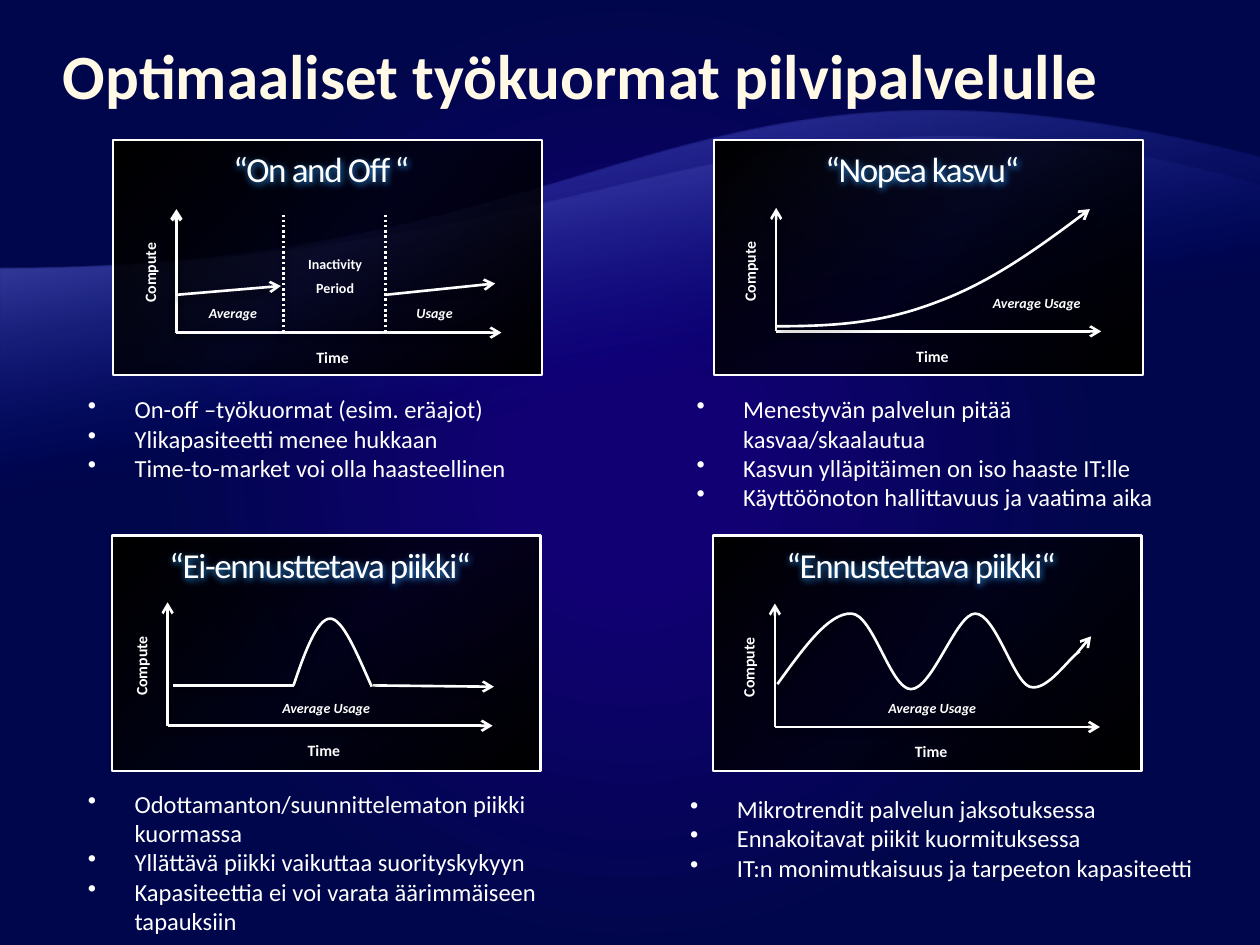
from pptx import Presentation
from pptx import util as u
from pptx.dml.color import RGBColor
from pptx.enum import dml, shapes, text
from pptx.oxml import parse_xml
from pptx.oxml.ns import qn

NS = 'xmlns:a="http://schemas.openxmlformats.org/drawingml/2006/main"'
WHITE = "FFFFFF"
MID = text.PP_ALIGN.CENTER
LABEL = dict(size=9, bold=True)
USAGE = dict(size=8, bold=True, italic=True)
SOFT = ("000000", 43, 4, 2, 90)
SLANT = ("000000", 40, 4, 3, 45)
HALO = ("2E95EA", 90, 4, 1, 60)


def rgb(code):
    return RGBColor.from_string(code)


def put(obj, **vals):
    for name, val in vals.items():
        setattr(obj, name, val)


def tint(fill, owner, stops, angle=None):
    """Gradient of (position, colour, opacity) stops; radial without an angle."""
    fill.background()
    marks = "".join(
        f'<a:gs pos="{pos * 1000}"><a:srgbClr val="{code}">'
        f'<a:alpha val="{clear * 1000}"/></a:srgbClr></a:gs>'
        for pos, code, clear in stops)
    if angle is None:
        kind = ('<a:path path="circle"><a:fillToRect l="50000" t="50000" '
                'r="50000" b="50000"/></a:path>')
    else:
        kind = f'<a:lin ang="{angle * 60000}" scaled="0"/>'
    new = parse_xml(f'<a:gradFill {NS} rotWithShape="1"><a:gsLst>{marks}</a:gsLst>{kind}</a:gradFill>')
    owner.replace(owner.find(qn("a:noFill")), new)


def shade(shape, code, clear, blur, dist, angle):
    shape._element.spPr.append(parse_xml(
        f'<a:effectLst {NS}><a:outerShdw blurRad="{u.Pt(blur)}" dist="{u.Pt(dist)}" '
        f'dir="{angle * 60000}" rotWithShape="0"><a:srgbClr val="{code}">'
        f'<a:alpha val="{clear * 1000}"/></a:srgbClr></a:outerShdw></a:effectLst>'))


def stroke(shape, width=1.5, tip=False, dots=False):
    shape.line.color.rgb = rgb(WHITE)
    shape.line.width = u.Pt(width)
    if dots:
        shape.line.dash_style = dml.MSO_LINE.ROUND_DOT
    if tip:
        shape.line._get_or_add_ln().append(parse_xml(f'<a:tailEnd {NS} type="arrow"/>'))


def line(group, x1, y1, x2, y2, shadow=SOFT, **look):
    wire = group.shapes.add_connector(
        shapes.MSO_CONNECTOR.STRAIGHT, *map(u.Inches, (x1, y1, x2, y2)))
    stroke(wire, **look)
    shade(wire, *shadow)


def curve(group, start, steps, close=False):
    """Outline whose steps are points (2 numbers) or Bézier curves (6 numbers)."""
    pen = group.shapes.build_freeform(*map(u.Inches, start), scale=1.0)
    pen.add_line_segments([tuple(map(u.Inches, s[-2:])) for s in steps], close=close)
    shape = pen.convert_to_shape()
    origin = (shape.left, shape.top)
    for seg, step in zip(list(shape._element.iter(qn("a:lnTo"))), steps):
        if len(step) == 6:
            spots = "".join(
                f'<a:pt x="{u.Inches(x) - origin[0]}" y="{u.Inches(y) - origin[1]}"/>'
                for x, y in zip(step[::2], step[1::2]))
            seg.getparent().replace(
                seg, parse_xml(f'<a:cubicBezTo {NS}>{spots}</a:cubicBezTo>'))
    return shape


def trace(group, start, steps, shadow=SLANT, tip=False):
    shape = curve(group, start, steps)
    shape.fill.background()
    stroke(shape, tip=tip)
    shade(shape, *shadow)


def words(group, box, lines, font, color=WHITE, inset=(0.1, 0.05), indent=0,
          turn=0, anchor=text.MSO_ANCHOR.TOP, **para):
    shape = group.shapes.add_textbox(*map(u.Inches, box))
    shape.rotation = turn
    side, edge = map(u.Inches, inset)
    frame = shape.text_frame
    put(frame, word_wrap=True, vertical_anchor=anchor, margin_left=side,
        margin_right=side, margin_top=edge, margin_bottom=edge)
    for i, line_text in enumerate(lines):
        p = frame.paragraphs[0] if i == 0 else frame.add_paragraph()
        put(p, **para)
        if indent:
            props = p._p.get_or_add_pPr()
            props.set("marL", str(u.Inches(indent)))
            props.set("indent", str(-u.Inches(indent)))
        run = p.add_run()
        run.text = line_text
        put(run.font, name="Calibri", **{**font, "size": u.Pt(font["size"])})
        run.font.color.rgb = rgb(color)
    return shape


def label(group, x, y, w, h, lines, turn=0, font=LABEL, **para):
    words(group, (x, y, w, h), lines, font, indent=0.25, turn=turn,
          alignment=MID, line_spacing=u.Pt(8), **para)


def usage(group, x, y, label_text):
    words(group, (x, y, 0.94, 0.15), [label_text], USAGE, inset=(0, 0), alignment=MID)


def bullets(group, box, lines):
    shape = words(group, box, lines, dict(size=14), indent=0.37)
    for p in shape.text_frame.paragraphs:
        p._p.get_or_add_pPr().append(parse_xml(f'<a:buChar {NS} char="•"/>'))


def panel(slide, x, y, head, axis, weight=1.5):
    """Dark card with a heading and two labelled axes."""
    group = slide.shapes.add_group_shape()
    card = group.shapes.add_shape(
        shapes.MSO_SHAPE.RECTANGLE, *map(u.Inches, (x, y, 3.4, 1.87)))
    card.shadow.inherit = False
    tint(card.fill, card._element.spPr,
         [(0, "000000", 100), (50, "000000", 70), (100, "000000", 100)], 45)
    stroke(card, 1.25)
    ax, ay = axis
    line(group, ax, ay, ax, ay - 0.98, tip=True, width=weight)
    line(group, ax, ay, ax + 2.58, ay, tip=True)
    label(group, ax - 0.57, ay - 0.58, 0.76, 0.21, ["Compute"], turn=270)
    label(group, ax + 0.88, ay + 0.11, 0.72, 0.22, ["Time"])
    title = words(group, (x - 0.05, y + 0.05, 3.4, 0.4), [head], dict(size=20),
                  inset=(0, 0.05), alignment=MID, line_spacing=0.9)
    run = title.text_frame.paragraphs[0].runs[0]
    props = run._r.get_or_add_rPr()
    props.set("spc", "-80")
    tint(run.font.fill, props, [(52, WHITE, 100), (83, "2E95EA", 100)], 90)
    shade(title, *HALO)
    return group


def wave(slide, start, steps, color, clear):
    shape = curve(slide, start, steps, close=True)
    shape.shadow.inherit = False
    shape.line.fill.background()
    tint(shape.fill, shape._element.spPr, [(65, "000D9E", 0), (100, color, clear)], 260)


def main():
    deck = Presentation()
    put(deck, slide_width=u.Inches(10), slide_height=u.Inches(7.5))
    slide = deck.slides.add_slide(deck.slide_layouts[6])

    # Background and waves
    fill = slide.background.fill
    fill.background()
    tint(fill, next(slide.element.iter(qn("p:bgPr"))),
         [(13, "110074", 100), (61, "00064B", 100)])
    wave(slide, (10, 7.33), [(0, 7.33), (0, 2.13), (5, 2.13, 5.34, 0.05, 10, 1.25)],
         "797FFF", 55)
    wave(slide, (10, 6.37), [(0, 6.37), (0, 2.13), (5, 2.13, 5.98, 0.31, 10, 1.47)],
         "A3A7FF", 30)

    # On and off
    g = panel(slide, 0.9, 1.11, "“On and Off “", (1.4, 2.64), weight=2)
    line(g, 1.4, 2.34, 2.23, 2.27, tip=True)
    line(g, 3.06, 2.34, 3.93, 2.25, tip=True)
    for x in (2.25, 3.06):
        line(g, x, 2.64, x, 1.71, dots=True)
    usage(g, 1.38, 2.42, "Average")
    usage(g, 2.98, 2.42, "Usage")
    label(g, 2.2, 2, 0.92, 0.4, ["Inactivity", "Period"],
          font=dict(size=8, bold=True), space_after=u.Pt(6))
    bullets(g, (0.6, 3.08, 4.16, 0.81), [
        "On-off –työkuormat (esim. eräajot)", "Ylikapasiteetti menee hukkaan",
        "Time-to-market voi olla haasteellinen"])

    # Unpredictable peak
    g = panel(slide, 0.89, 4.25, "“Ei-ennusttetava piikki“", (1.33, 5.76))
    usage(g, 2.12, 5.55, "Average Usage")
    line(g, 2.96, 5.44, 3.92, 5.45, SLANT, tip=True)
    line(g, 1.37, 5.44, 2.33, 5.44, SLANT)
    trace(g, (2.33, 5.44), [(2.42, 5.17, 2.52, 4.91, 2.62, 4.91),
                            (2.72, 4.91, 2.83, 5.18, 2.95, 5.45)])
    bullets(g, (0.6, 6.21, 4.4, 1.28), [
        "Odottamanton/suunnittelematon piikki kuormassa",
        "Yllättävä piikki vaikuttaa suorityskykyyn",
        "Kapasiteettia ei voi varata äärimmäiseen tapauksiin"])

    # Fast growth
    g = panel(slide, 5.67, 1.11, "“Nopea kasvu“", (6.16, 2.63))
    usage(g, 7.76, 2.34, "Average Usage")
    trace(g, (6.16, 2.59), [(6.65, 2.59, 7.01, 2.56, 7.43, 2.4),
                            (7.84, 2.25, 8.24, 1.97, 8.65, 1.66)], tip=True)
    bullets(g, (5.43, 3.08, 4.12, 1.04), [
        "Menestyvän palvelun pitää kasvaa/skaalautua",
        "Kasvun ylläpitäimen on iso haaste IT:lle",
        "Käyttöönoton hallittavuus ja vaatima aika"])

    # Predictable peak
    g = panel(slide, 5.66, 4.25, "“Ennustettava piikki“", (6.15, 5.77))
    usage(g, 6.93, 5.55, "Average Usage")
    line(g, 8.55, 5.18, 8.66, 5.05, tip=True)
    trace(g, (6.17, 5.43), [
        (6.38, 5.14, 6.58, 4.86, 6.76, 4.87), (6.93, 4.88, 7.07, 5.47, 7.23, 5.47),
        (7.4, 5.47, 7.59, 4.87, 7.74, 4.87), (7.9, 4.87, 8.04, 5.4, 8.17, 5.45),
        (8.31, 5.5, 8.49, 5.21, 8.57, 5.17)])
    bullets(g, (5.38, 6.25, 4.37, 0.81), [
        "Mikrotrendit palvelun jaksotuksessa", "Ennakoitavat piikit kuormituksessa",
        "IT:n monimutkaisuus ja tarpeeton kapasiteetti"])

    # Slide title
    words(slide, (0.5, 0, 9, 0.9), ["Optimaaliset työkuormat pilvipalvelulle"],
          dict(size=36, bold=True), color="FFF9E5", inset=(0, 0.01),
          anchor=text.MSO_ANCHOR.BOTTOM)

    deck.save("out.pptx")


if __name__ == "__main__":
    main()
